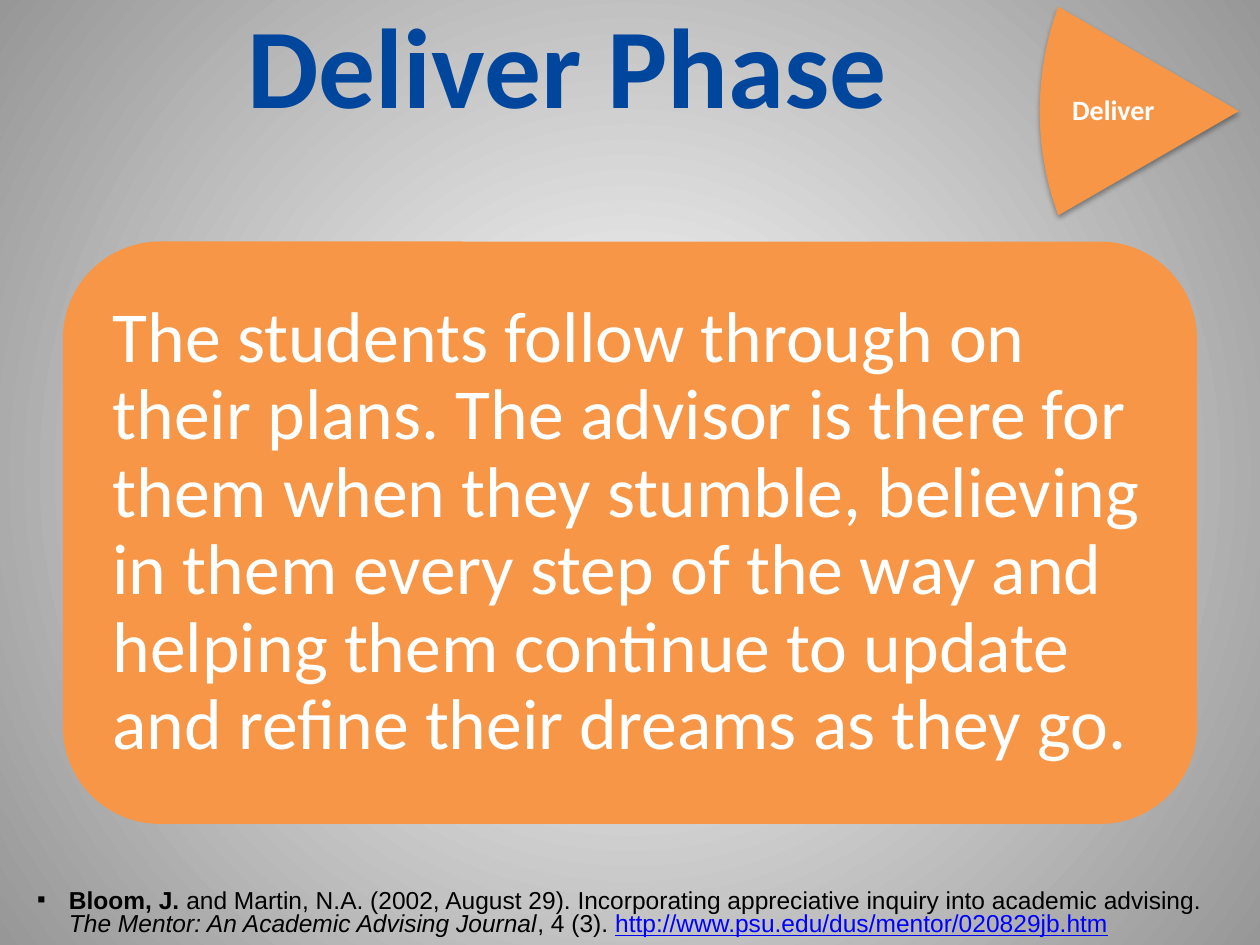
from dataclasses import dataclass

from lxml import etree
from pptx import Presentation
from pptx.dml.color import RGBColor
from pptx.enum.shapes import MSO_SHAPE
from pptx.enum.text import MSO_ANCHOR, PP_ALIGN
from pptx.oxml.ns import qn
from pptx.util import Cm, Pt

ROUNDED = MSO_SHAPE.ROUNDED_RECTANGLE
WEDGE = MSO_SHAPE.PIE
TOP = MSO_ANCHOR.TOP
MIDDLE = MSO_ANCHOR.MIDDLE
LEFT = PP_ALIGN.LEFT
CENTER = PP_ALIGN.CENTER


@dataclass(frozen=True)
class Theme:
    heading_font: str = "Calibri"
    source_font: str = "Arial"
    title_color: str = "00469C"
    accent: str = "F79646"
    light: str = "FFFFFF"
    edge: str = "979797"
    dark: str = "000000"
    link: str = "0000FF"
    title_size: float = 64.8
    body_size: float = 41
    label_size: float = 16
    source_size: float = 14


THEME = Theme()


def color(value):
    return RGBColor.from_string(value)


def add_child(parent, tag, **attributes):
    child = etree.SubElement(parent, qn(tag))
    for name, value in attributes.items():
        child.set(name, str(value))
    return child


def paint_background(page):
    fill = page.background.fill
    fill.gradient()
    for stop, value, position in zip(fill.gradient_stops, (THEME.light, THEME.edge), (0, 1)):
        stop.color.rgb = color(value)
        stop.position = position
    gradient = page.element.find(".//" + qn("a:gradFill"))
    gradient.remove(gradient.find(qn("a:lin")))
    radial = add_child(gradient, "a:path", path="circle")
    add_child(radial, "a:fillToRect", l=50000, t=50000, r=50000, b=50000)


def add_panel(page, kind, left, top, width, height):
    panel = page.shapes.add_shape(kind, Cm(left), Cm(top), Cm(width), Cm(height))
    panel.shadow.inherit = False
    panel.fill.solid()
    panel.fill.fore_color.rgb = color(THEME.accent)
    panel.line.fill.background()
    return panel


def add_shadow(panel):
    effects = panel.element.spPr.find(qn("a:effectLst"))
    shadow = add_child(effects, "a:outerShdw", blurRad=Pt(3.1), dist=Pt(1.8),
                       dir=5400000, rotWithShape=0)
    tint = add_child(shadow, "a:srgbClr", val=THEME.dark)
    add_child(tint, "a:alpha", val=35000)


def add_text_box(page, left, top, width, height, anchor=MIDDLE, inset=None,
                 align=CENTER, spacing=1.0):
    box = page.shapes.add_textbox(Cm(left), Cm(top), Cm(width), Cm(height))
    frame = box.text_frame
    frame.word_wrap = True
    frame.vertical_anchor = anchor
    if inset is not None:
        frame.margin_left = frame.margin_right = Cm(inset)
        frame.margin_top = frame.margin_bottom = Cm(inset)
    para = frame.paragraphs[0]
    para.alignment = align
    para.line_spacing = spacing
    return para


def add_bullet(para, symbol, indent, hanging):
    properties = para._p.get_or_add_pPr()
    properties.set("marL", str(Cm(indent)))
    properties.set("indent", str(-Cm(hanging)))
    add_child(properties, "a:buFont", typeface=THEME.source_font)
    add_child(properties, "a:buChar", char=symbol)


def add_span(para, text, size, value, font=THEME.heading_font,
             bold=False, italic=False, underline=False):
    span = para.add_run()
    span.text = text
    span.font.name = font
    span.font.size = Pt(size)
    span.font.color.rgb = color(value)
    span.font.bold = bold
    span.font.italic = italic
    span.font.underline = underline


def add_title(page):
    para = add_text_box(page, 0.64, 0, 21.59, 2.54)
    add_span(para, "Deliver Phase", THEME.title_size, THEME.title_color, bold=True)


def add_message(page):
    add_panel(page, ROUNDED, 1.27, 4.87, 22.86, 11.74)
    para = add_text_box(page, 1.84, 5.44, 21.72, 10.6, inset=0.43, align=LEFT, spacing=0.9)
    add_span(para, "The students follow through on their plans. The advisor is there for "
             "them when they stumble, believing in them every step of the way and helping "
             "them continue to update and refine their dreams as they go.",
             THEME.body_size, THEME.light)


def add_source(page):
    para = add_text_box(page, 0, 17.83, 25.4, 1.22, anchor=TOP, align=LEFT, spacing=0.8)
    add_bullet(para, "▪", 1.14, 0.64)
    spans = [
        ("Bloom, J.", THEME.dark, {"bold": True}),
        (" and Martin, N.A. (2002, August 29). Incorporating appreciative inquiry "
         "into academic advising. ", THEME.dark, {}),
        ("The Mentor: An Academic Advising Journal", THEME.dark, {"italic": True}),
        (", 4 (3). ", THEME.dark, {}),
        ("http://www.psu.edu/dus/mentor/020829jb.htm", THEME.link, {"underline": True}),
    ]
    for text, value, style in spans:
        add_span(para, text, THEME.source_size, value, THEME.source_font, **style)


def add_phase_wedge(page):
    wedge = add_panel(page, WEDGE, 20.96, -2.74, 8.03, 9.96)
    wedge.adjustments[0] = 90
    wedge.adjustments[1] = 126
    add_shadow(wedge)
    para = add_text_box(page, 21.34, 1.27, 2.21, 1.96, inset=0.08, spacing=0.9)
    add_span(para, "Deliver", THEME.label_size, THEME.light, bold=True)


def main():
    deck = Presentation()
    deck.slide_width = Cm(25.4)
    deck.slide_height = Cm(19.05)
    page = deck.slides.add_slide(deck.slide_layouts[6])
    paint_background(page)
    add_title(page)
    add_message(page)
    add_source(page)
    add_phase_wedge(page)
    deck.save("out.pptx")


if __name__ == "__main__":
    main()
